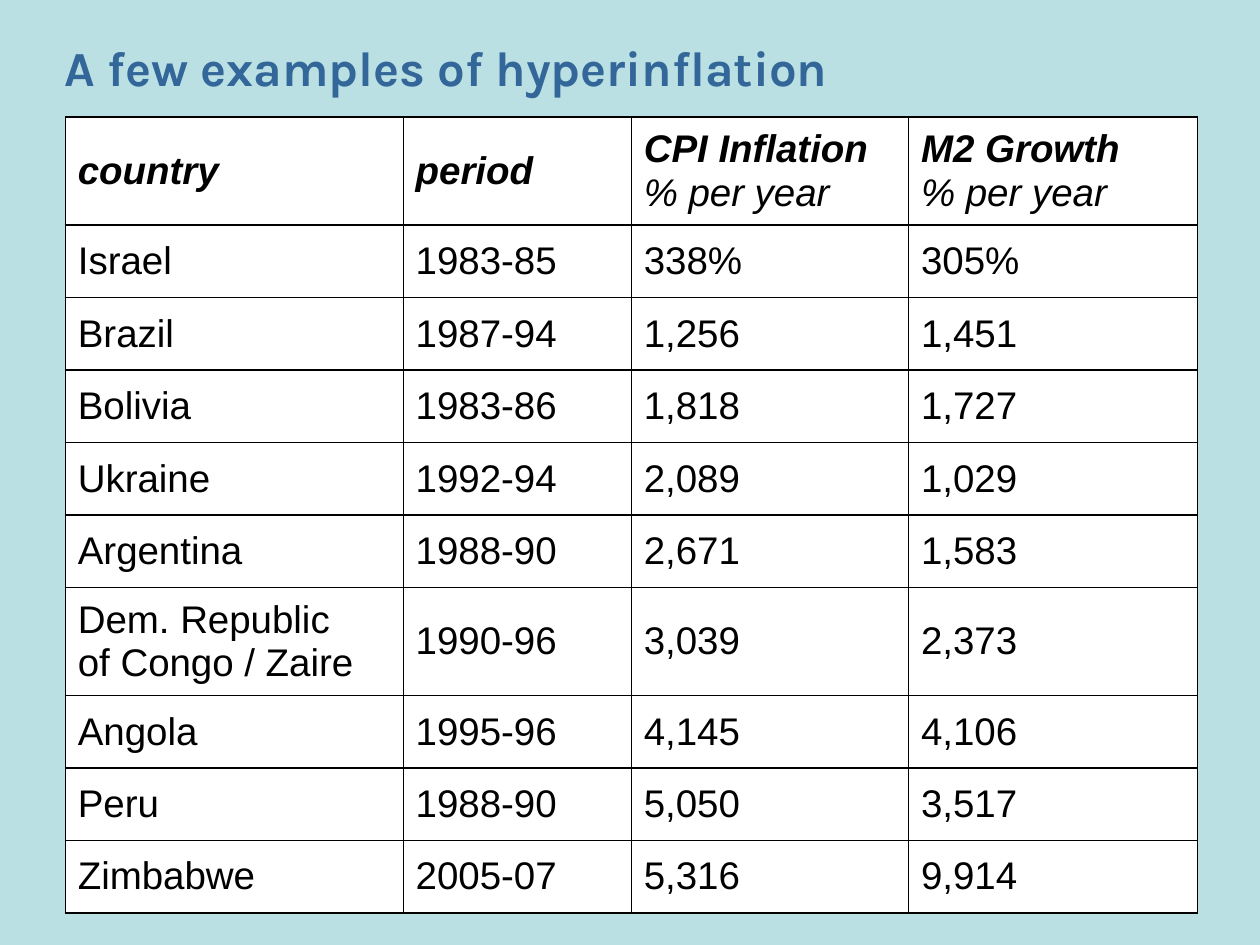
"""Build a slide with a table of hyperinflation examples."""
from lxml import etree
from pptx import Presentation
from pptx.dml.color import RGBColor
from pptx.enum.text import MSO_ANCHOR
from pptx.oxml.ns import qn
from pptx.util import Cm, Pt

MIDDLE = MSO_ANCHOR.MIDDLE

TITLE = "A few examples of hyperinflation"
HEADER = [
    ("country",),
    ("period",),
    ("CPI Inflation", "% per year"),
    ("M2 Growth", "% per year"),
]
COUNTRIES = [
    (("Israel",), "1983-85", "338%", "305%"),
    (("Brazil",), "1987-94", "1,256", "1,451"),
    (("Bolivia",), "1983-86", "1,818", "1,727"),
    (("Ukraine",), "1992-94", "2,089", "1,029"),
    (("Argentina",), "1988-90", "2,671", "1,583"),
    (("Dem. Republic", "of Congo / Zaire"), "1990-96", "3,039", "2,373"),
    (("Angola",), "1995-96", "4,145", "4,106"),
    (("Peru",), "1988-90", "5,050", "3,517"),
    (("Zimbabwe",), "2005-07", "5,316", "9,914"),
]
COLUMN_WIDTHS = [6.81, 4.6, 5.59, 5.82]
ROW_HEIGHTS = {1: 1.46, 2: 2.18}
TABLE_LEFT, TABLE_TOP = 1.32, 2.36
CELL_MARGINS = {"left": 0.25, "right": 0.25, "top": 0.13, "bottom": 0.13}

THEME = {
    "background": "BBE0E3",
    "title": "336699",
    "text": "000000",
    "cell": "FFFFFF",
    "border": "000000",
    "border_width": 1,
    "title_font": "Karla",
    "body_font": "Arial",
    "title_size": 28,
    "body_size": 22,
}


def write_text(paragraph, lines, *, font=THEME["body_font"], size=THEME["body_size"],
               color=THEME["text"], bold_first=False, italic=False):
    """Write lines into one paragraph, with the first one bold on request."""
    for index, line in enumerate(lines):
        if index:
            paragraph.add_line_break()
        run = paragraph.add_run()
        run.text = line
        run.font.name = font
        run.font.size = Pt(size)
        run.font.bold = bold_first and index == 0
        run.font.italic = italic
        run.font.color.rgb = RGBColor.from_string(color)


def add_borders(cell):
    """Draw a solid line on all four sides of a cell."""
    properties = cell._tc.get_or_add_tcPr()
    for side in ("lnL", "lnR", "lnT", "lnB"):
        line = etree.SubElement(properties, qn(f"a:{side}"), w=str(Pt(THEME["border_width"])))
        fill = etree.SubElement(line, qn("a:solidFill"))
        etree.SubElement(fill, qn("a:srgbClr"), val=THEME["border"])


def format_cell(cell):
    """Set the borders, fill, margins and anchor of a cell."""
    add_borders(cell)
    cell.fill.solid()
    cell.fill.fore_color.rgb = RGBColor.from_string(THEME["cell"])
    for side, margin in CELL_MARGINS.items():
        setattr(cell, f"margin_{side}", Cm(margin))
    cell.vertical_anchor = MIDDLE


def add_title(slide):
    """Add the slide heading."""
    shape = slide.shapes.add_textbox(Cm(1.3), Cm(0.41), Cm(22.91), Cm(1.83))
    frame = shape.text_frame
    frame.word_wrap = True
    frame.vertical_anchor = MIDDLE
    for side in CELL_MARGINS:
        setattr(frame, f"margin_{side}", 0)
    paragraph = frame.paragraphs[0]
    paragraph.line_spacing = 1.05
    write_text(paragraph, [TITLE], font=THEME["title_font"], size=THEME["title_size"],
               color=THEME["title"], bold_first=True)


def add_country_table(slide):
    """Add the table, with row heights set by the number of lines."""
    rows = [HEADER] + [(name, *((value,) for value in values)) for name, *values in COUNTRIES]
    heights = [ROW_HEIGHTS[max(map(len, row))] for row in rows]
    table = slide.shapes.add_table(
        len(rows), len(COLUMN_WIDTHS), Cm(TABLE_LEFT), Cm(TABLE_TOP),
        Cm(sum(COLUMN_WIDTHS)), Cm(sum(heights))).table
    table.horz_banding = False
    for column, width in zip(table.columns, COLUMN_WIDTHS):
        column.width = Cm(width)
    for row_index, (row, height) in enumerate(zip(rows, heights)):
        table.rows[row_index].height = Cm(height)
        is_header = row_index == 0
        for column_index, lines in enumerate(row):
            cell = table.cell(row_index, column_index)
            format_cell(cell)
            write_text(cell.text_frame.paragraphs[0], lines,
                       bold_first=is_header, italic=is_header)


def main():
    """Create and save the presentation."""
    presentation = Presentation()
    presentation.slide_width, presentation.slide_height = Cm(25.4), Cm(19.05)
    slide = presentation.slides.add_slide(presentation.slide_layouts[6])
    slide.background.fill.solid()
    slide.background.fill.fore_color.rgb = RGBColor.from_string(THEME["background"])
    add_title(slide)
    add_country_table(slide)
    presentation.save("out.pptx")


if __name__ == "__main__":
    main()
